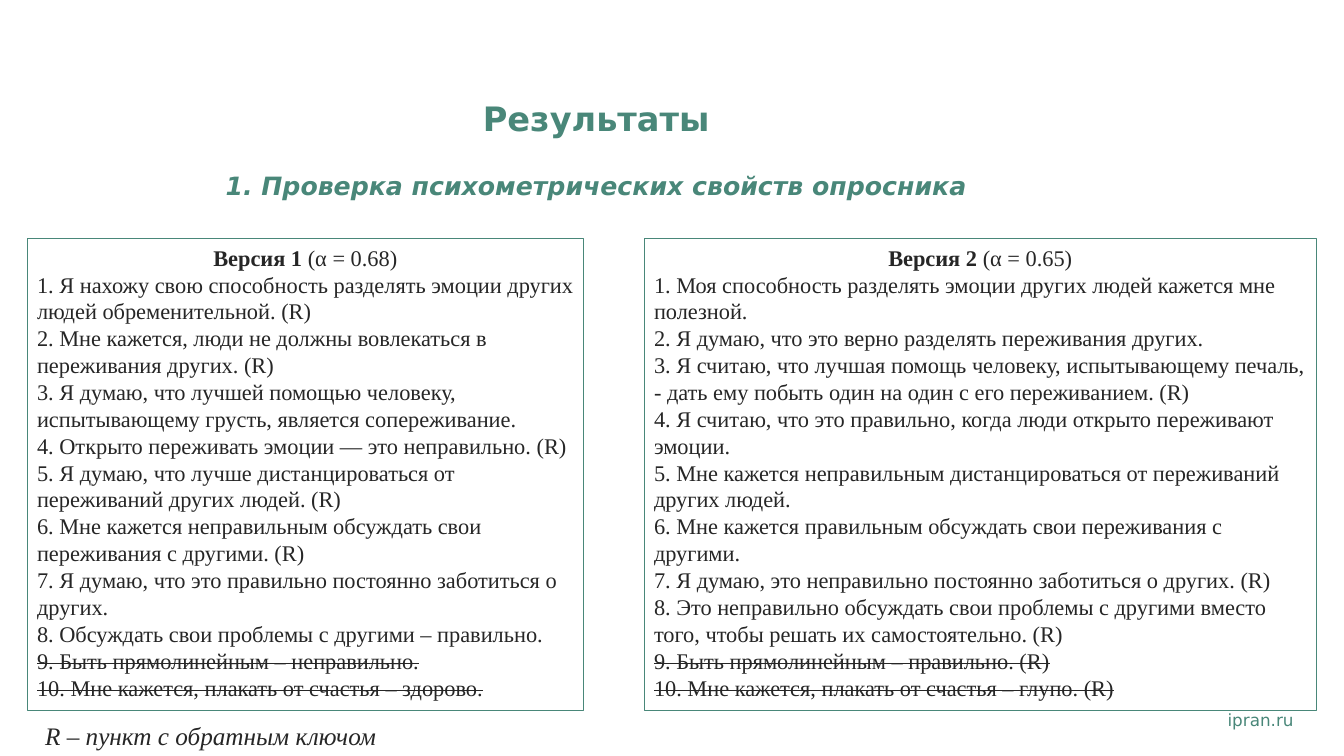
from dataclasses import dataclass

from pptx import Presentation
from pptx.dml.color import RGBColor
from pptx.enum.shapes import MSO_SHAPE
from pptx.enum.text import MSO_ANCHOR, MSO_AUTO_SIZE, PP_ALIGN
from pptx.slide import Slide
from pptx.util import Pt

GREEN = "498779"
INK = "262626"
SANS = "DejaVu Sans"
SERIF = "Times New Roman"
PANEL_TOP, PANEL_HEIGHT = 170.6, 337


@dataclass
class Version:
    left: float
    width: float
    name: str
    alpha: str
    kept: list[str]
    dropped: list[str]


VERSIONS = [
    Version(19.4, 397.4, "Версия 1 ", "(α = 0.68)", [
        "Я нахожу свою способность разделять эмоции других людей обременительной. (R)",
        "Мне кажется, люди не должны вовлекаться в переживания других. (R)",
        "Я думаю, что лучшей помощью человеку, испытывающему грусть, является сопереживание.",
        "Открыто переживать эмоции — это неправильно. (R)",
        "Я думаю, что лучше дистанцироваться от переживаний других людей. (R)",
        "Мне кажется неправильным обсуждать свои переживания с другими. (R)",
        "Я думаю, что это правильно постоянно заботиться о других.",
        "Обсуждать свои проблемы с другими – правильно.",
    ], [
        "Быть прямолинейным – неправильно.",
        "Мне кажется, плакать от счастья – здорово.",
    ]),
    Version(460.1, 480.2, "Версия 2 ", "(α = 0.65)", [
        "Моя способность разделять эмоции других людей кажется мне полезной.",
        "Я думаю, что это верно разделять переживания других.",
        "Я считаю, что лучшая помощь человеку, испытывающему печаль, - дать ему побыть один на один с его переживанием. (R)",
        "Я считаю, что это правильно, когда люди открыто переживают эмоции.",
        "Мне кажется неправильным дистанцироваться от переживаний других людей.",
        "Мне кажется правильным обсуждать свои переживания с другими.",
        "Я думаю, это неправильно постоянно заботиться о других. (R)",
        "Это неправильно обсуждать свои проблемы с другими вместо того, чтобы решать их самостоятельно. (R)",
    ], [
        "Быть прямолинейным – правильно. (R)",
        "Мне кажется, плакать от счастья – глупо. (R)",
    ]),
]


def rgb(color: str) -> RGBColor:
    return RGBColor.from_string(color)


def add_text(p, text: str, *, size: float = 16, font: str = SERIF, color: str = INK,
             bold: bool = False, italic: bool = False, strike: bool = False) -> None:
    r = p.add_run()
    r.text = text
    r.font.size = Pt(size)
    r.font.name = font
    r.font.color.rgb = rgb(color)
    r.font.bold = bold
    r.font.italic = italic
    if strike:
        r._r.get_or_add_rPr().set("strike", "sngStrike")


def add_title(s: Slide) -> None:
    sp = s.shapes.title
    sp.left, sp.top, sp.width, sp.height = Pt(15.1), Pt(67.7), Pt(821.5), Pt(40.3)
    tf = sp.text_frame
    tf.auto_size = MSO_AUTO_SIZE.NONE
    tf.word_wrap = True
    tf.vertical_anchor = MSO_ANCHOR.TOP
    tf.margin_top = Pt(5.7)
    heading, subheading = tf.paragraphs[0], tf.add_paragraph()
    for p in (heading, subheading):
        p.alignment = PP_ALIGN.CENTER
        p.line_spacing = 0.9
        p.space_before = Pt(0)
    subheading.space_before = Pt(25)
    add_text(heading, "Результаты", size=24, font=SANS, color=GREEN, bold=True)
    add_text(subheading, "1. Проверка психометрических свойств опросника",
             size=18, font=SANS, color=GREEN, bold=True, italic=True)


def add_version(s: Slide, version: Version) -> None:
    sp = s.shapes.add_shape(MSO_SHAPE.RECTANGLE, Pt(version.left), Pt(PANEL_TOP),
                            Pt(version.width), Pt(PANEL_HEIGHT))
    sp.shadow.inherit = False
    sp.fill.background()
    sp.line.color.rgb = rgb(GREEN)
    sp.line.width = Pt(0.75)
    tf = sp.text_frame
    tf.word_wrap = True
    tf.vertical_anchor = MSO_ANCHOR.TOP
    p = tf.paragraphs[0]
    p.alignment = PP_ALIGN.CENTER
    add_text(p, version.name, bold=True)
    add_text(p, version.alpha)
    for number, item in enumerate(version.kept + version.dropped, 1):
        p = tf.add_paragraph()
        p.alignment = PP_ALIGN.LEFT
        add_text(p, f"{number}. {item}", strike=number > len(version.kept))


def add_label(s: Slide, left: float, top: float, width: float, height: float,
              text: str, **style) -> None:
    sp = s.shapes.add_textbox(Pt(left), Pt(top), Pt(width), Pt(height))
    sp.text_frame.word_wrap = False
    add_text(sp.text_frame.paragraphs[0], text, **style)


def main() -> None:
    prs = Presentation()
    prs.slide_width, prs.slide_height = Pt(960), Pt(540)
    s = prs.slides.add_slide(prs.slide_layouts[5])
    add_title(s)
    for version in VERSIONS:
        add_version(s, version)
    add_label(s, 25.2, 511.2, 253.4, 28.8, "R – пункт с обратным ключом",
              size=18, italic=True)
    add_label(s, 869.8, 503.3, 74.9, 21.6, "ipran.ru", size=12, font=SANS, color=GREEN)
    prs.save("out.pptx")


if __name__ == "__main__":
    main()
